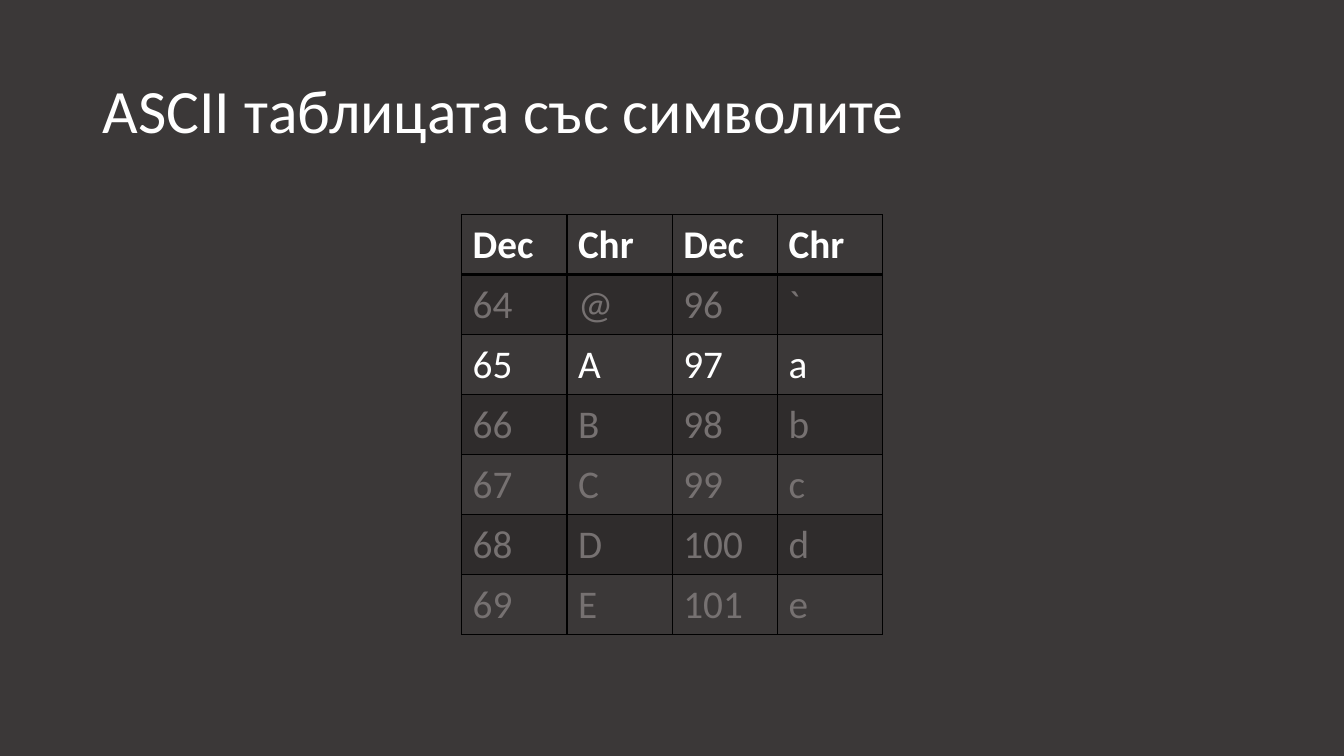
from lxml import etree
from pptx import Presentation
from pptx.dml.color import RGBColor
from pptx.enum.text import MSO_ANCHOR
from pptx.oxml.ns import qn
from pptx.util import Inches, Pt

MIDDLE = MSO_ANCHOR.MIDDLE
WIDTH, HEIGHT = 13.33, 7.5
FONT = "Calibri"
BACKGROUND, WHITE, MUTED, BLACK = "3B3838", "FFFFFF", "767171", "000000"
BAND_OPACITY = 20
HEADERS = ["Dec", "Chr"] * 2
FIRST_UPPER, FIRST_LOWER, CODE_COUNT = 64, 96, 6
HIGHLIGHTED_ROW = 2


def color(value):
    return RGBColor.from_string(value)


def write(para, text, size=28, fill=WHITE, bold=False, spacing=None):
    span = para.add_run()
    span.text = text
    span.font.name = FONT
    span.font.size = Pt(size)
    span.font.bold = bold
    span.font.color.rgb = color(fill)
    if spacing:
        para.line_spacing = spacing


def add_border(cell, side, points):
    properties = cell._tc.get_or_add_tcPr()
    line = etree.SubElement(properties, qn(f"a:ln{side}"), w=str(Pt(points)))
    solid = etree.SubElement(line, qn("a:solidFill"))
    etree.SubElement(solid, qn("a:srgbClr"), val=BLACK)


def fill_band(cell):
    cell.fill.solid()
    cell.fill.fore_color.rgb = color(BLACK)
    shade = cell._tc.tcPr.find(f"{qn('a:solidFill')}/{qn('a:srgbClr')}")
    etree.SubElement(shade, qn("a:alpha"), val=str(BAND_OPACITY * 1000))


class SlideBuilder:
    def __init__(self, deck):
        self.page = deck.slides.add_slide(deck.slide_layouts[6])
        self.page.background.fill.solid()
        self.page.background.fill.fore_color.rgb = color(BACKGROUND)

    def place(self, left, top, width, height):
        return (Inches(left * WIDTH), Inches(top * HEIGHT),
                Inches(width * WIDTH), Inches(height * HEIGHT))

    def title(self, text, *area):
        box = self.page.shapes.add_textbox(*self.place(*area))
        box.text_frame.word_wrap = True
        box.text_frame.vertical_anchor = MIDDLE
        write(box.text_frame.paragraphs[0], text, size=44, spacing=0.9)

    def table(self, rows, *area):
        frame = self.page.shapes.add_table(len(rows), len(rows[0]), *self.place(*area))
        table = frame.table
        table.first_row = table.horz_banding = False
        for row_index, values in enumerate(rows):
            for column_index, value in enumerate(values):
                self.cell(table.cell(row_index, column_index), value, row_index)

    def cell(self, cell, text, row_index):
        cell.margin_left = cell.margin_right = Inches(0.11)
        cell.margin_top = cell.margin_bottom = Inches(0.06)
        is_header = row_index == 0
        bright = is_header or row_index == HIGHLIGHTED_ROW
        write(cell.text_frame.paragraphs[0], text,
              fill=WHITE if bright else MUTED, bold=is_header)
        for side in "LRTB":
            heavy = (side == "B" and is_header) or (side == "T" and row_index == 1)
            add_border(cell, side, 2 if heavy else 1)
        if row_index % 2:
            fill_band(cell)
        else:
            cell.fill.background()


def main():
    deck = Presentation()
    deck.slide_width, deck.slide_height = Inches(WIDTH), Inches(HEIGHT)
    builder = SlideBuilder(deck)
    codes = [(FIRST_UPPER + step, FIRST_LOWER + step) for step in range(CODE_COUNT)]
    rows = [HEADERS] + [
        [text for code in pair for text in (str(code), chr(code))] for pair in codes
    ]
    builder.table(rows, 0.3435, 0.284, 0.3135, 0.5413)
    builder.title("ASCII таблицата със символите", 0.069, 0.0533, 0.8627, 0.1933)
    deck.save("out.pptx")


if __name__ == "__main__":
    main()
